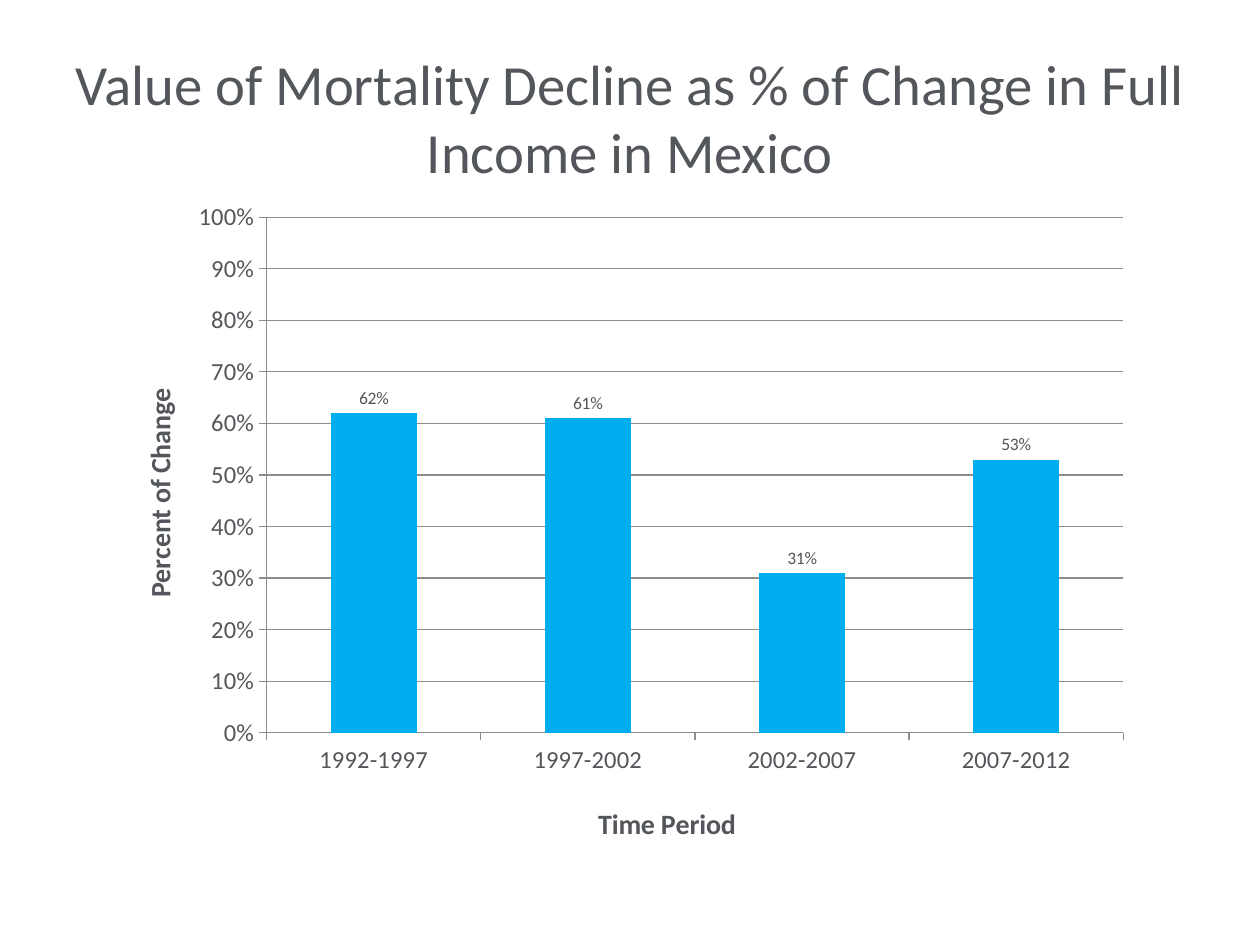
from lxml import etree
from pptx import Presentation
from pptx.chart.data import CategoryChartData
from pptx.dml.color import RGBColor
from pptx.enum.chart import XL_CHART_TYPE, XL_LABEL_POSITION, XL_TICK_MARK
from pptx.enum.text import MSO_ANCHOR, PP_ALIGN
from pptx.oxml.ns import qn
from pptx.util import Pt

COLUMN = XL_CHART_TYPE.COLUMN_CLUSTERED
ABOVE = XL_LABEL_POSITION.OUTSIDE_END
OUT = XL_TICK_MARK.OUTSIDE
NONE = XL_TICK_MARK.NONE
MIDDLE = MSO_ANCHOR.MIDDLE
CENTER = PP_ALIGN.CENTER

SLATE = RGBColor(0x53, 0x56, 0x5A)
GRAY = RGBColor(0x8C, 0x8C, 0x8C)
BLUE = RGBColor(0x00, 0xAE, 0xEF)
FONT = "Calibri"


def style(font, size, bold=False):
    font.name = FONT
    font.size = Pt(size)
    font.bold = bold
    font.color.rgb = SLATE


def place(parent, index, **parts):
    for old in parent.findall(qn("c:layout")):
        parent.remove(old)
    layout = etree.Element(qn("c:layout"))
    manual = etree.SubElement(layout, qn("c:manualLayout"))
    for name, value in parts.items():
        etree.SubElement(manual, qn("c:" + name)).set("val", str(value))
    parent.insert(index, layout)


def add_title(slide, text):
    title = slide.shapes.title
    title.left, title.top = Pt(36), Pt(21.6)
    title.width, title.height = Pt(648), Pt(90)
    frame = title.text_frame
    frame.text = text
    frame.word_wrap = True
    frame.vertical_anchor = MIDDLE
    line = frame.paragraphs[0]
    line.alignment = CENTER
    style(line.runs[0].font, 32.4)


def set_axis(axis, text, x, y):
    frame = axis.axis_title.text_frame
    frame.text = text
    style(frame.paragraphs[0].runs[0].font, 16, True)
    place(frame._txBody.getparent().getparent(), 1,
          xMode="edge", yMode="edge", x=x, y=y)
    style(axis.tick_labels.font, 14)
    axis.major_tick_mark = OUT
    axis.minor_tick_mark = NONE
    axis.format.line.color.rgb = GRAY
    axis.format.line.width = Pt(0.75)


def add_chart(slide):
    data = CategoryChartData(number_format="0%")
    data.categories = ["1992-1997", "1997-2002", "2002-2007", "2007-2012"]
    data.add_series("Series 1", [0.62, 0.61, 0.31, 0.53])
    chart = slide.shapes.add_chart(
        COLUMN, Pt(59.76), Pt(108), Pt(594), Pt(383.76), data).chart
    chart.has_legend = False
    chart.has_title = False
    style(chart.font, 10)

    plot = chart.plots[0]
    plot.gap_width = 150
    plot.vary_by_categories = False
    fill = plot.series[0].format.fill
    fill.solid()
    fill.fore_color.rgb = BLUE
    plot.has_data_labels = True
    labels = plot.data_labels
    labels.show_value = True
    labels.number_format = "0%"
    labels.number_format_is_linked = False
    labels.position = ABOVE
    style(labels.font, 10)

    set_axis(chart.category_axis, "Time Period", 0.47, 0.91)
    scale = chart.value_axis
    set_axis(scale, "Percent of Change", 0.03, 0.29)
    scale.minimum_scale, scale.maximum_scale = 0, 1
    scale.major_unit = 0.1
    scale.tick_labels.number_format = "0%"
    scale.tick_labels.number_format_is_linked = False
    scale.has_major_gridlines = True
    grid = scale.major_gridlines.format.line
    grid.color.rgb = GRAY
    grid.width = Pt(0.75)
    place(chart._chartSpace.chart.plotArea, 0, layoutTarget="inner",
          xMode="edge", yMode="edge", x=0.156, y=0.042, w=0.824, h=0.768)


def main():
    deck = Presentation()
    deck.slide_width, deck.slide_height = Pt(720), Pt(540)
    slide = deck.slides.add_slide(deck.slide_layouts[5])
    add_chart(slide)
    add_title(slide, "Value of Mortality Decline as % of Change "
                     "in Full Income in Mexico")
    deck.save("out.pptx")


if __name__ == "__main__":
    main()
